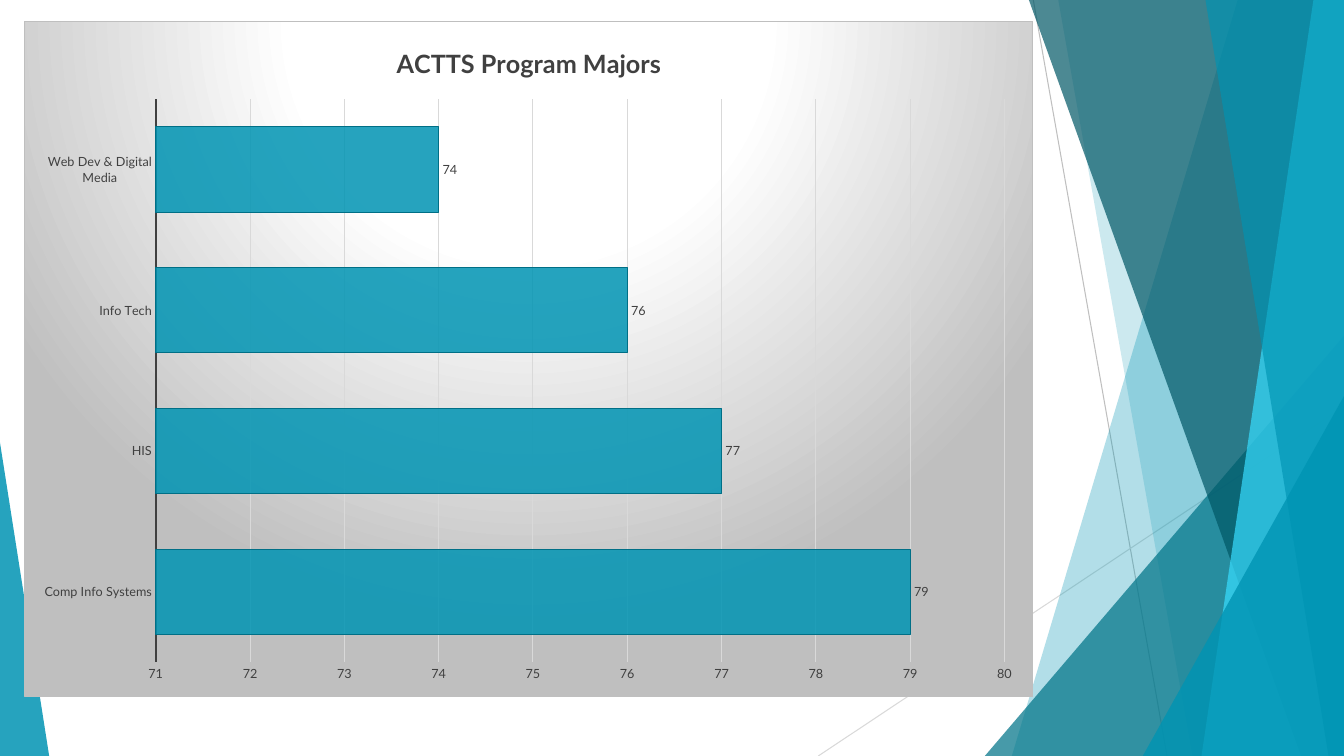
from collections import namedtuple
from dataclasses import dataclass

from lxml import etree
from pptx import Presentation
from pptx.chart.data import CategoryChartData
from pptx.dml.color import RGBColor
from pptx.enum.chart import XL_CHART_TYPE, XL_LABEL_POSITION, XL_TICK_MARK
from pptx.enum.shapes import MSO_CONNECTOR, MSO_SHAPE
from pptx.oxml import parse_xml
from pptx.oxml.ns import nsdecls, qn
from pptx.util import Cm, Pt

BAR_CLUSTERED = XL_CHART_TYPE.BAR_CLUSTERED
OUTSIDE_END = XL_LABEL_POSITION.OUTSIDE_END
NO_TICK = XL_TICK_MARK.NONE
STRAIGHT = MSO_CONNECTOR.STRAIGHT
TRIANGLE = MSO_SHAPE.ISOSCELES_TRIANGLE

Box = namedtuple("Box", "left top width height")  # centimetres


@dataclass(frozen=True)
class Theme:
    font: str = "Lato"
    teal: str = "0094B3"
    teal_mid: str = "007488"
    teal_dark: str = "005766"
    cyan: str = "38DDFF"
    bar_edge: str = "006F86"
    ink: str = "404040"
    grey: str = "BFBFBF"
    light_grey: str = "D9D9D9"
    white: str = "FFFFFF"
    title_size: int = 18
    chart_size: int = 10
    label_size: int = 9
    thin: float = 0.75
    thick: float = 1.5


THEME = Theme()


def set_line(line, color, width):
    line.color.rgb = RGBColor.from_string(color)
    line.width = Pt(width)


def set_font(font, size, color=THEME.ink, bold=False):
    font.name = THEME.font
    font.size = Pt(size)
    font.bold = bold
    font.color.rgb = RGBColor.from_string(color)


def set_opacity(element, percent):
    """Make the first colour found in the element partly transparent."""
    color = next(element.iter(qn("a:srgbClr")))
    etree.SubElement(color, qn("a:alpha")).set("val", str(percent * 1000))


def paint(shape, color, opacity):
    shape.shadow.inherit = False
    shape.fill.solid()
    shape.fill.fore_color.rgb = RGBColor.from_string(color)
    shape.line.fill.background()
    set_opacity(shape.element, opacity)


def add_hairline(slide, box, start, end, color):
    x1, y1, x2, y2 = start + end
    line = slide.shapes.add_connector(
        STRAIGHT, Cm(box.left + x1), Cm(box.top + y1), Cm(box.left + x2), Cm(box.top + y2))
    set_line(line.line, color, THEME.thin)
    etree.SubElement(line.element.spPr, qn("a:effectLst"))


def add_band(slide, box, top_x, bottom_x, color, opacity):
    """Fill from a slanted left edge to the right side of the box."""
    right, bottom = box.left + box.width, box.top + box.height
    builder = slide.shapes.build_freeform(Cm(box.left + top_x), Cm(box.top), scale=1.0)
    builder.add_line_segments([
        (Cm(right), Cm(box.top)),
        (Cm(right), Cm(bottom)),
        (Cm(box.left + bottom_x), Cm(bottom)),
    ], close=True)
    paint(builder.convert_to_shape(), color, opacity)


def add_corner(slide, box, apex, color, opacity):
    """Fill the box with a triangle whose apex is at the left (0) or right (1)."""
    triangle = slide.shapes.add_shape(TRIANGLE, *map(Cm, box))
    triangle.adjustments[0] = apex
    paint(triangle, color, opacity)


def add_right_facets(slide, box):
    def corner(x, y, color, opacity):
        area = Box(box.left + x, box.top + y, box.width - x, box.height - y)
        add_corner(slide, area, 1, color, opacity)

    add_hairline(slide, box, (5.42, 0), (8.79, box.height), THEME.grey)
    add_hairline(slide, box, (box.width, 10.24), (0, box.height), THEME.light_grey)
    add_band(slide, box, 10.57, 4.88, THEME.teal, 30)
    add_band(slide, box, 6.05, 9.43, THEME.teal, 20)
    corner(4.2, 8.46, THEME.teal_mid, 72)
    add_band(slide, box, 5.31, 12.17, THEME.teal_dark, 70)
    add_band(slide, box, 12.48, 9.66, THEME.cyan, 70)
    add_band(slide, box, 9.76, 12.86, THEME.teal, 65)
    corner(8.18, 9.98, THEME.teal, 80)


def style_chart_area(chart):
    """Give the chart its radial background, border and plot position."""
    stops = "".join(
        f'<a:gs pos="{position * 1000}"><a:srgbClr val="{color}"/></a:gs>'
        for position, color in ((0, THEME.white), (39, THEME.white), (100, THEME.grey)))
    area = parse_xml(
        f'<c:spPr {nsdecls("c", "a")}><a:gradFill><a:gsLst>{stops}</a:gsLst>'
        '<a:path path="circle"><a:fillToRect l="50000" t="-80000" r="50000" b="180000"/>'
        f'</a:path></a:gradFill><a:ln w="{Pt(THEME.thin)}"><a:solidFill>'
        f'<a:srgbClr val="{THEME.grey}"/></a:solidFill></a:ln></c:spPr>')
    chart.element.find(qn("c:chart")).addnext(area)

    plot_area = next(chart.element.iter(qn("c:plotArea")))
    for old_layout in plot_area.findall(qn("c:layout")):
        plot_area.remove(old_layout)
    sizes = "".join(
        f'<c:{name} val="{value}"/>'
        for name, value in (("x", 0.13), ("y", 0.115), ("w", 0.842), ("h", 0.834)))
    plot_area.insert(0, parse_xml(
        f'<c:layout {nsdecls("c")}><c:manualLayout><c:layoutTarget val="inner"/>'
        f'<c:xMode val="edge"/><c:yMode val="edge"/>{sizes}</c:manualLayout></c:layout>'))


def style_axes(chart):
    for axis in (chart.category_axis, chart.value_axis):
        axis.major_tick_mark = axis.minor_tick_mark = NO_TICK
        set_font(axis.tick_labels.font, THEME.label_size)
    chart.category_axis.has_major_gridlines = False
    set_line(chart.category_axis.format.line, THEME.ink, THEME.thick)

    values = chart.value_axis
    values.minimum_scale, values.maximum_scale, values.major_unit = 71, 80, 1
    values.format.line.fill.background()
    values.has_major_gridlines = True
    set_line(values.major_gridlines.format.line, THEME.light_grey, THEME.thin)


def add_majors_chart(slide, box):
    data = CategoryChartData()
    data.categories = ["Comp Info Systems", "HIS", "Info Tech", "Web Dev & Digital Media"]
    data.add_series("Series 1", (79, 77, 76, 74))
    chart = slide.shapes.add_chart(BAR_CLUSTERED, *map(Cm, box), data).chart
    set_font(chart.font, THEME.chart_size)
    chart.has_legend = False
    chart.has_title = True
    title = chart.chart_title
    title.include_in_layout = False
    paragraph = title.text_frame.paragraphs[0]
    paragraph.text = "ACTTS Program Majors"
    set_font(paragraph.font, THEME.title_size, bold=True)

    style_axes(chart)
    plot = chart.plots[0]
    plot.gap_width = 65
    plot.vary_by_categories = False
    series = plot.series[0]
    series.format.fill.solid()
    series.format.fill.fore_color.rgb = RGBColor.from_string(THEME.teal)
    set_opacity(next(chart.element.iter(qn("c:ser"))), 85)
    set_line(series.format.line, THEME.bar_edge, THEME.thin)
    labels = series.data_labels
    labels.show_value = True
    labels.position = OUTSIDE_END
    set_font(labels.font, THEME.label_size)
    style_chart_area(chart)


def main():
    presentation = Presentation()
    presentation.slide_width = Cm(33.87)
    presentation.slide_height = Cm(19.05)
    slide = presentation.slides.add_slide(presentation.slide_layouts[6])
    add_right_facets(slide, Box(20.62, 0, 13.25, 19.05))
    add_corner(slide, Box(0, 11.15, 1.24, 7.9), 0, THEME.teal, 85)
    add_majors_chart(slide, Box(0.61, 0.53, 25.43, 17.04))
    presentation.save("out.pptx")


if __name__ == "__main__":
    main()
